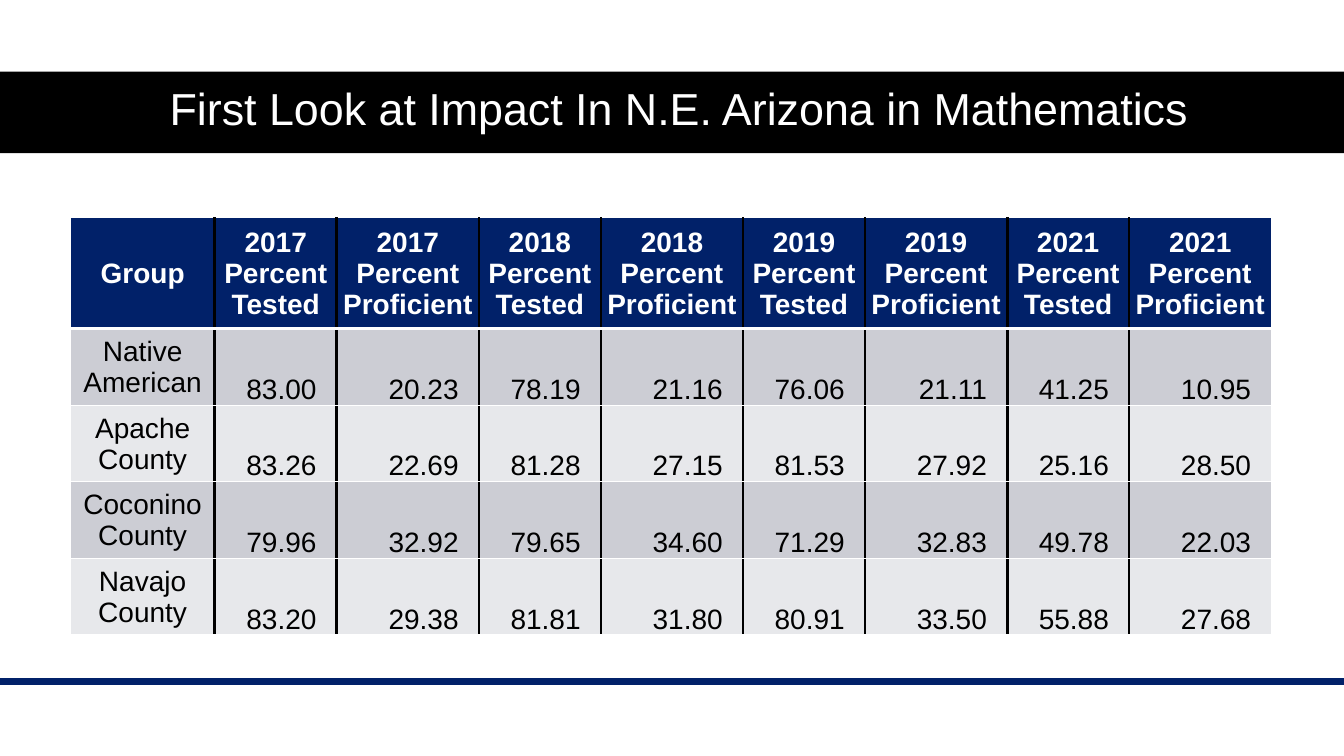
from lxml.etree import SubElement
from pptx import Presentation
from pptx.dml.color import RGBColor
from pptx.enum.shapes import MSO_CONNECTOR, MSO_SHAPE
from pptx.enum.text import MSO_ANCHOR, PP_ALIGN
from pptx.oxml import parse_xml
from pptx.oxml.ns import nsdecls, qn
from pptx.util import Inches, Pt

COLORS = {"navy": "012169", "black": "000000", "white": "FFFFFF",
          "dark_band": "CCCDD4", "light_band": "E7E8EB"}
FONT = "Arial"
WIDTH, HEIGHT = 13.33, 7.5
GROUP_W, TESTED_W, PROFICIENT_W = 1.43, 1.21, 1.41
HEADER_H, ROW_H = 1.1, 0.76
YEARS = (2017, 2018, 2019, 2021)
MEASURES = ("Tested", "Proficient")
RESULTS = {
    "Native American": "83.00 20.23 78.19 21.16 76.06 21.11 41.25 10.95",
    "Apache County": "83.26 22.69 81.28 27.15 81.53 27.92 25.16 28.50",
    "Coconino County": "79.96 32.92 79.65 34.60 71.29 32.83 49.78 22.03",
    "Navajo County": "83.20 29.38 81.81 31.80 80.91 33.50 55.88 27.68",
}


def rgb(name):
    """Return the named palette colour."""
    return RGBColor.from_string(COLORS[name])


def style_text(p, size, color, align, bold=False):
    """Format one paragraph."""
    p.alignment = align
    p.font.name, p.font.size, p.font.bold = FONT, Pt(size), bold
    p.font.color.rgb = rgb(color)


def set_borders(cell, borders):
    """Draw the left, right, top and bottom borders of a cell, in that order."""
    tcPr = cell._tc.get_or_add_tcPr()
    for i, (side, (color, width)) in enumerate(zip("LRTB", borders)):
        tcPr.insert(i, parse_xml(
            f'<a:ln{side} {nsdecls("a")} w="{Pt(width)}"><a:solidFill>'
            f'<a:srgbClr val="{COLORS[color]}"/></a:solidFill></a:ln{side}>'))


def add_title(slide, text, left, top, width, height):
    """Place the title on a full-width black band."""
    bar = slide.shapes.add_shape(MSO_SHAPE.RECTANGLE, 0, Inches(top + 0.01),
                                 Inches(WIDTH), Inches(height))
    bar.shadow.inherit = False
    bar.fill.solid()
    bar.fill.fore_color.rgb = rgb("black")
    bar.line.fill.background()
    title = slide.shapes.title
    title._element.addprevious(bar._element)
    title.left, title.top = Inches(left), Inches(top)
    title.width, title.height = Inches(width), Inches(height)
    tf = title.text_frame
    tf.text = text
    tf.vertical_anchor = MSO_ANCHOR.MIDDLE
    tf.paragraphs[0].line_spacing = 0.9
    style_text(tf.paragraphs[0], 32, "white", PP_ALIGN.CENTER)


def add_results(slide, left, top):
    """Place the table of results by group and year."""
    header = ["Group"] + [f"{y} Percent {m}" for y in YEARS for m in MEASURES]
    rows = [header] + [[g, *values.split()] for g, values in RESULTS.items()]
    widths = [GROUP_W] + [TESTED_W, PROFICIENT_W] * len(YEARS)
    heights = [HEADER_H] + [ROW_H] * len(RESULTS)
    table = slide.shapes.add_table(
        len(rows), len(header), Inches(left), Inches(top),
        Inches(sum(widths)), Inches(sum(heights))).table
    for column, width in zip(table.columns, widths):
        column.width = Inches(width)
    thin, divider = ("white", 1), ("black", 2.25)
    for r, values in enumerate(rows):
        table.rows[r].height = Inches(heights[r])
        fill = "navy" if r == 0 else "dark_band" if r % 2 else "light_band"
        for c, value in enumerate(values):
            cell = table.cell(r, c)
            number = r > 0 and c > 0
            cell.text = value
            cell.vertical_anchor = MSO_ANCHOR.BOTTOM if number else MSO_ANCHOR.MIDDLE
            cell.margin_left = cell.margin_top = Inches(0.01)
            cell.margin_right = Inches(0.2 if number else 0.01)
            cell.margin_bottom = 0
            style_text(cell.text_frame.paragraphs[0], 20,
                       "black" if r else "white",
                       PP_ALIGN.RIGHT if number else PP_ALIGN.CENTER, r == 0)
            cell.fill.solid()
            cell.fill.fore_color.rgb = rgb(fill)
            set_borders(cell, (divider if c else thin,
                               divider if c < len(values) - 1 else thin,
                               ("white", 3) if r == 1 else thin,
                               ("white", 3) if r == 0 else thin))


def add_footer_rule(slide, top):
    """Draw the navy rule across the foot of the slide."""
    rule = slide.shapes.add_connector(
        MSO_CONNECTOR.STRAIGHT, Inches(-0.03), Inches(top),
        Inches(WIDTH + 0.04), Inches(top))
    rule.line.color.rgb = rgb("navy")
    rule.line.width = Pt(4.5)
    SubElement(rule._element.spPr, qn("a:effectLst"))


def main():
    """Build and save the slide."""
    prs = Presentation()
    prs.slide_width, prs.slide_height = Inches(WIDTH), Inches(HEIGHT)
    slide = prs.slides.add_slide(prs.slide_layouts[5])
    add_footer_rule(slide, 6.76)
    add_title(slide, "First Look at Impact In N.E. Arizona in Mathematics",
              0.61, 0.7, 12.26, 0.81)
    add_results(slide, 0.7, 2.16)
    prs.save("out.pptx")


if __name__ == "__main__":
    main()
